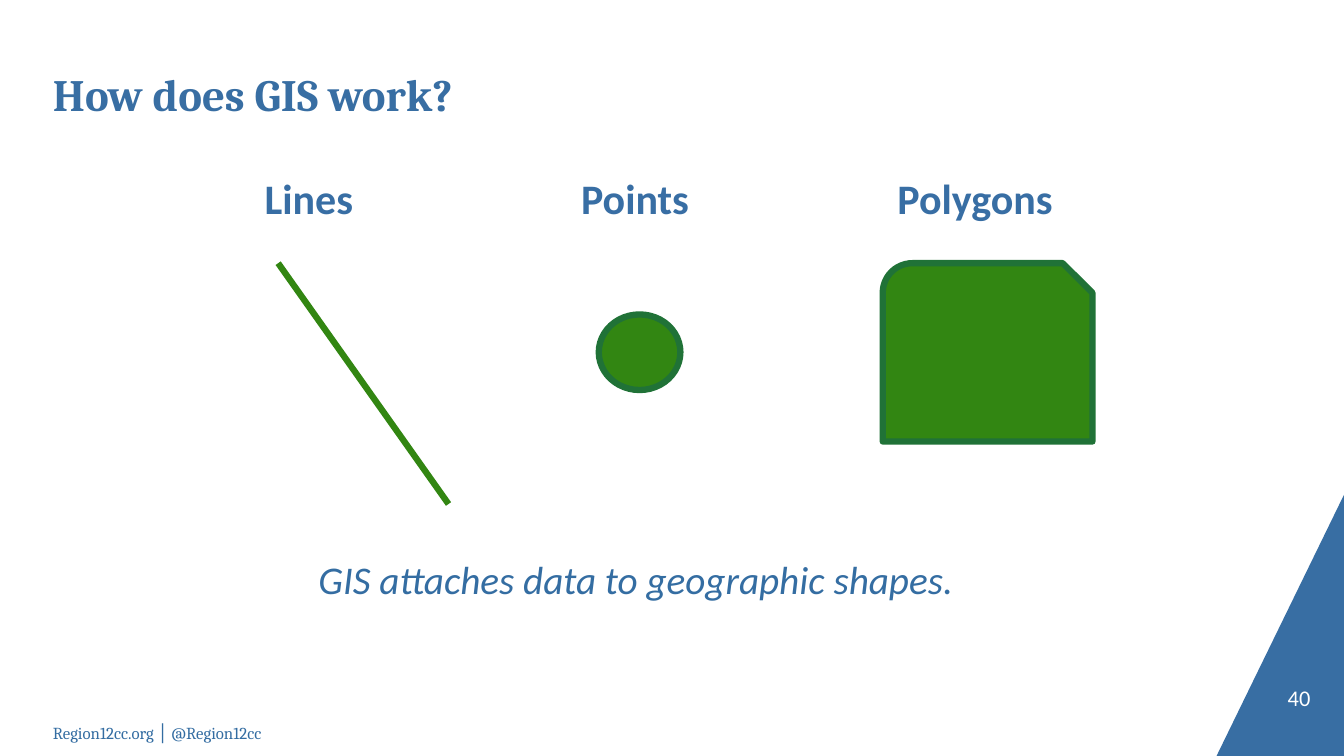
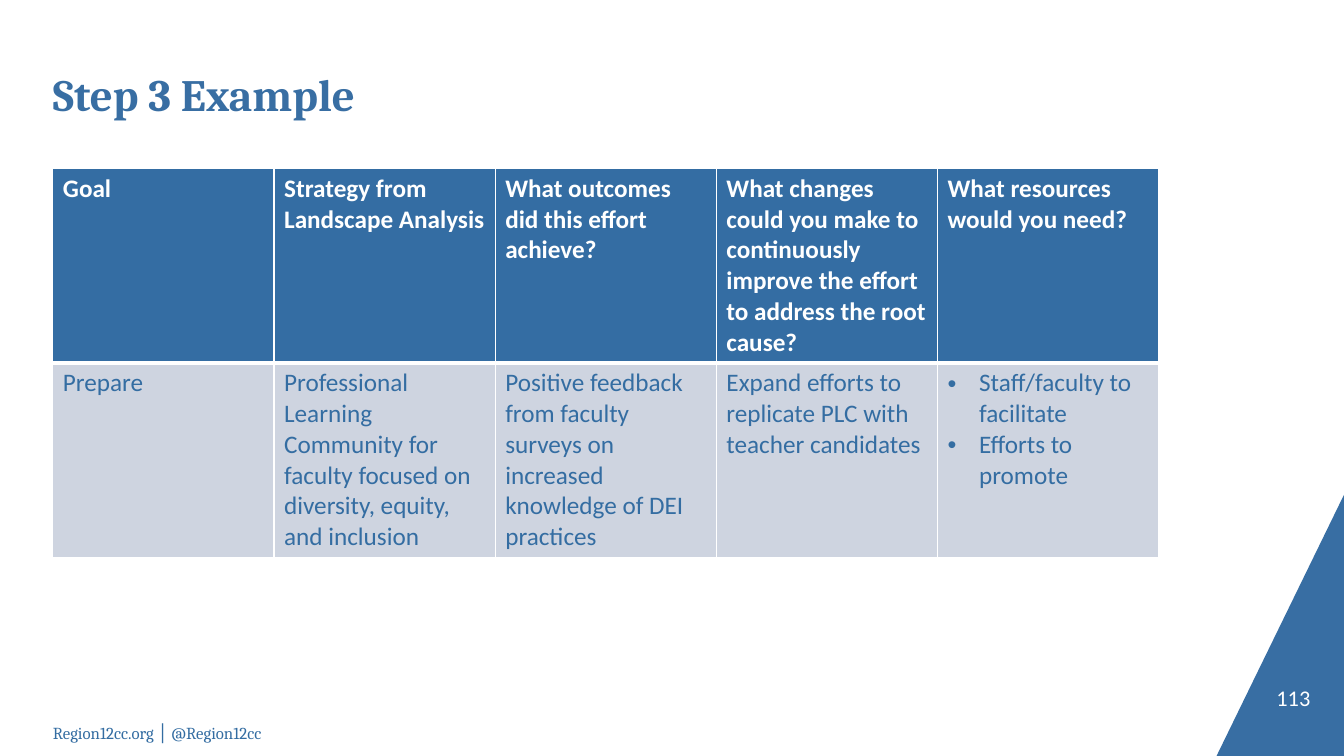
from dataclasses import dataclass

from lxml import etree
from pptx import Presentation
from pptx.dml.color import RGBColor
from pptx.enum import shapes, text
from pptx.oxml import ns
from pptx.util import Pt

COLORS = {
    "band": "386EA3",
    "label": "386EA4",
    "text": "346DA2",
    "header": "346DA3",
    "cell": "CED4E0",
    "green": "328612",
    "outline": "207237",
    "white": "FFFFFF",
}
WIDTH, HEIGHT = 960, 540
MARGIN = 37.8
CONTENT_WIDTH = 790
FOOTER = "Region12cc.org │ @Region12cc"


@dataclass(frozen=True)
class Box:
    left: float
    top: float
    width: float
    height: float

    def lengths(self) -> tuple:
        return Pt(self.left), Pt(self.top), Pt(self.width), Pt(self.height)


@dataclass(frozen=True)
class Column:
    heading: str
    items: tuple[str, ...]


COLUMNS = (
    Column("Goal", ("Prepare",)),
    Column(
        "Strategy from Landscape Analysis",
        ("Professional Learning Community for faculty focused on diversity, equity, and inclusion",),
    ),
    Column(
        "What outcomes did this effort achieve?",
        ("Positive feedback from faculty surveys on increased knowledge of DEI practices",),
    ),
    Column(
        "What changes could you make to continuously improve the effort to address the root cause?",
        ("Expand efforts to replicate PLC with teacher candidates",),
    ),
    Column("What resources would you need?", ("Staff/faculty to facilitate", "Efforts to promote")),
)


def rgb(name: str) -> RGBColor:
    return RGBColor.from_string(COLORS[name])


def write(p, content: str, *, size: float, color: str, font: str = "Calibri",
          bold: bool = False, italic: bool = False, align=text.PP_ALIGN.LEFT) -> None:
    p.alignment = align
    r = p.add_run()
    r.text = content
    r.font.name = font
    r.font.size = Pt(size)
    r.font.bold = bold
    r.font.italic = italic
    r.font.color.rgb = rgb(color)


def set_frame(tf, anchor, inset: tuple[float, float]) -> None:
    tf.word_wrap = True
    tf.auto_size = text.MSO_AUTO_SIZE.NONE
    tf.vertical_anchor = anchor
    tf.margin_left = tf.margin_right = Pt(inset[0])
    tf.margin_top = tf.margin_bottom = Pt(inset[1])


def add_text(s, box: Box, content: str, *, anchor=text.MSO_ANCHOR.TOP,
             inset: tuple[float, float] = (7.2, 3.6), **fmt) -> None:
    tf = s.shapes.add_textbox(*box.lengths()).text_frame
    set_frame(tf, anchor, inset)
    write(tf.paragraphs[0], content, **fmt)


def add_base(prs, title: str, number: int):
    s = prs.slides.add_slide(prs.slide_layouts[5])
    builder = s.shapes.build_freeform(Pt(WIDTH), Pt(353.5))
    builder.add_line_segments([(Pt(869), Pt(HEIGHT)), (Pt(WIDTH), Pt(HEIGHT))])
    corner = builder.convert_to_shape()
    corner.shadow.inherit = False
    corner.fill.solid()
    corner.fill.fore_color.rgb = rgb("band")
    corner.line.fill.background()

    add_text(s, Box(MARGIN, 516.5, 168, 14.4), FOOTER, anchor=text.MSO_ANCHOR.MIDDLE,
             inset=(0, 0), size=12, color="text", font="Cambria")
    sp = s.shapes.title
    sp.left, sp.top, sp.width, sp.height = Box(MARGIN, 47.5, CONTENT_WIDTH, 39).lengths()
    set_frame(sp.text_frame, text.MSO_ANCHOR.MIDDLE, (0, 0))
    write(sp.text_frame.paragraphs[0], title, size=32, color="band", font="Cambria", bold=True)
    add_text(s, Box(865, 486, 71, 21.6), str(number), anchor=text.MSO_ANCHOR.BOTTOM,
             inset=(0, 0), size=16, color="white", align=text.PP_ALIGN.RIGHT)
    return s


def add_green_shape(s, kind, box: Box) -> None:
    sp = s.shapes.add_shape(kind, *box.lengths())
    sp.shadow.inherit = False
    sp.fill.solid()
    sp.fill.fore_color.rgb = rgb("green")
    sp.line.color.rgb = rgb("outline")
    sp.line.width = Pt(4.5)


def add_green_line(s, start: tuple[float, float], end: tuple[float, float]) -> None:
    line = s.shapes.add_connector(shapes.MSO_CONNECTOR.STRAIGHT,
                                  *(Pt(v) for v in start + end))
    line.line.color.rgb = rgb("green")
    line.line.width = Pt(4.5)
    etree.SubElement(line._element.spPr, ns.qn("a:effectLst"))


def set_borders(cell, **widths: float) -> None:
    tc_pr = cell._tc.get_or_add_tcPr()
    for side in "LRTB":
        ln = etree.SubElement(tc_pr, ns.qn(f"a:ln{side}"), w=str(Pt(widths.get(side, 1))))
        fill = etree.SubElement(ln, ns.qn("a:solidFill"))
        etree.SubElement(fill, ns.qn("a:srgbClr"), val=COLORS["white"])


def add_bullet(p) -> None:
    p_pr = p._p.get_or_add_pPr()
    p_pr.set("marL", str(Pt(22.5)))
    p_pr.set("indent", str(-Pt(22.5)))
    etree.SubElement(p_pr, ns.qn("a:buFont"), typeface="Arial")
    etree.SubElement(p_pr, ns.qn("a:buChar"), char="•")


def fill_cell(cell, items: tuple[str, ...], fill: str, **fmt) -> None:
    cell.fill.solid()
    cell.fill.fore_color.rgb = rgb(fill)
    tf = cell.text_frame
    for i, item in enumerate(items):
        p = tf.add_paragraph() if i else tf.paragraphs[0]
        if len(items) > 1:
            add_bullet(p)
        write(p, item, size=18, **fmt)


def add_shapes_slide(prs) -> None:
    s = add_base(prs, "How does GIS work?", 40)
    for i, label in enumerate(("Lines", "Points", "Polygons")):
        add_text(s, Box(182 + 226 * i, 119.5, 150, 41), label,
                 size=30, color="label", bold=True)
    add_green_line(s, (198.7, 188), (320.4, 360))
    add_green_shape(s, shapes.MSO_SHAPE.OVAL, Box(427.7, 224.6, 58.3, 54))
    add_green_shape(s, shapes.MSO_SHAPE.SNIP_ROUND_RECTANGLE, Box(630.5, 188, 149.8, 127.4))
    add_text(s, Box(220.3, 393.1, 523.4, 41), "GIS attaches data to geographic shapes.",
             size=28, color="text", italic=True)


def add_table_slide(prs) -> None:
    s = add_base(prs, "Step 3 Example", 113)
    box = Box(MARGIN, 120.2, CONTENT_WIDTH, 277)
    table = s.shapes.add_table(2, len(COLUMNS), *box.lengths()).table
    table.horz_banding = False
    for i, column in enumerate(COLUMNS):
        table.columns[i].width = Pt(CONTENT_WIDTH / len(COLUMNS))
        head, body = table.cell(0, i), table.cell(1, i)
        set_borders(head, B=3)
        set_borders(body, T=3)
        fill_cell(head, (column.heading,), "header", color="white", bold=True)
        fill_cell(body, column.items, "cell", color="text")


def main() -> None:
    prs = Presentation()
    prs.slide_width, prs.slide_height = Pt(WIDTH), Pt(HEIGHT)
    add_shapes_slide(prs)
    add_table_slide(prs)
    prs.save("out.pptx")


if __name__ == "__main__":
    main()
